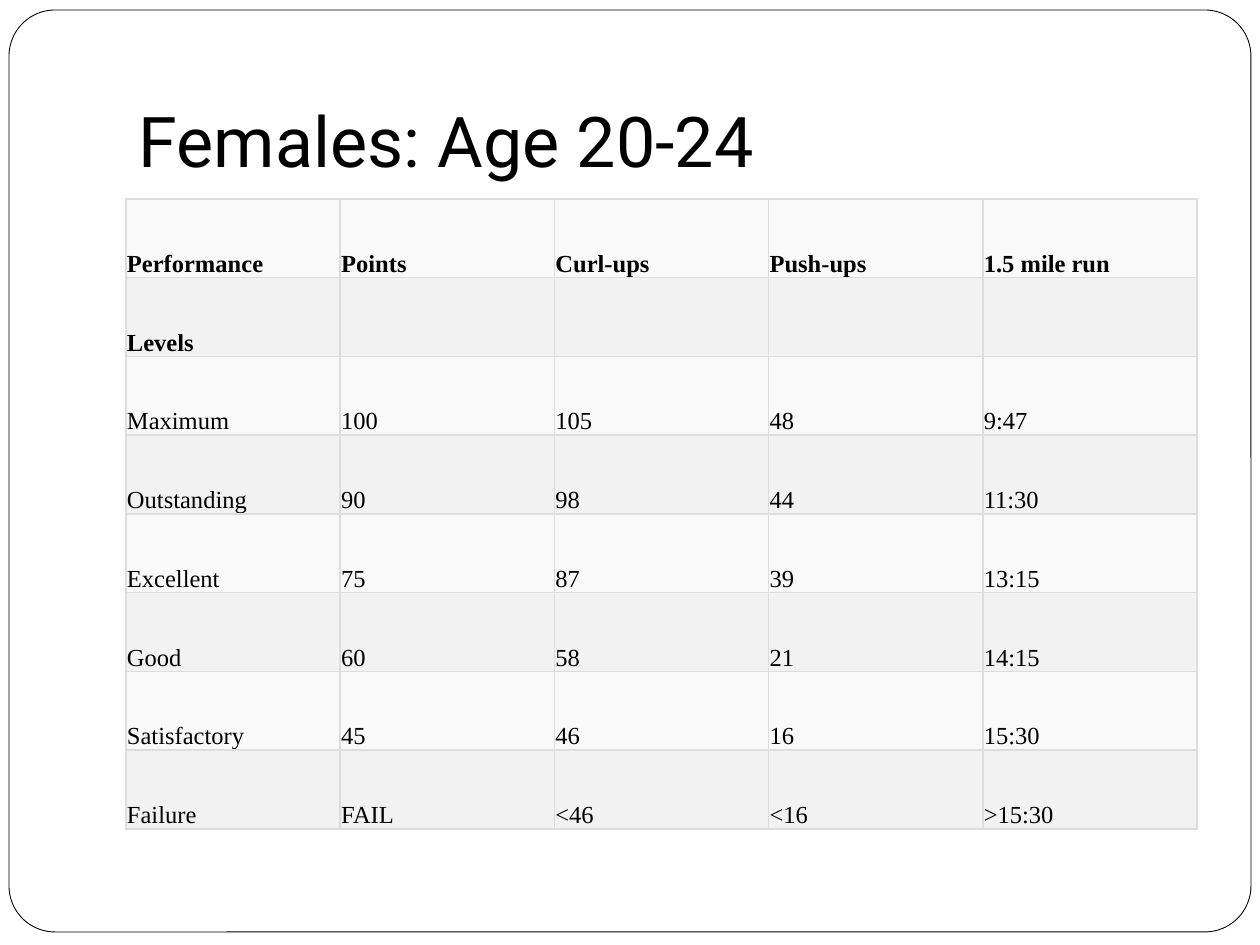
from lxml.etree import SubElement
from pptx import Presentation
from pptx.dml.color import RGBColor
from pptx.enum.shapes import MSO_SHAPE
from pptx.enum.text import MSO_ANCHOR, PP_ALIGN
from pptx.oxml.ns import qn
from pptx.util import Emu, Pt

PIXELS_PER_INCH = 126
BLACK = "000000"
WHITE = "FFFFFF"
BORDER = "DDDDDD"
ROW_FILLS = ("F9F9F9", "F2F2F2")
HEADER_ROWS = 2

FITNESS_LEVELS = [
    ("Performance", "Points", "Curl-ups", "Push-ups", "1.5 mile run"),
    ("Levels", "", "", "", ""),
    ("Maximum", "100", "105", "48", "9:47"),
    ("Outstanding", "90", "98", "44", "11:30"),
    ("Excellent", "75", "87", "39", "13:15"),
    ("Good", "60", "58", "21", "14:15"),
    ("Satisfactory", "45", "46", "16", "15:30"),
    ("Failure", "FAIL", "<46", "<16", ">15:30"),
]


def px(length):
    return Emu(round(length * 914400 / PIXELS_PER_INCH))


def color(hex_code):
    return RGBColor.from_string(hex_code)


def write_text(text_frame, text, *, font, size, bold=False, fill=BLACK):
    paragraph = text_frame.paragraphs[0]
    paragraph.alignment = PP_ALIGN.LEFT
    run = paragraph.add_run()
    run.text = text
    run.font.name = font
    run.font.size = Pt(size)
    run.font.bold = bold
    run.font.color.rgb = color(fill)


def set_margins(target, left, top, right, bottom):
    target.margin_left, target.margin_top = px(left), px(top)
    target.margin_right, target.margin_bottom = px(right), px(bottom)


def add_frame(slide):
    frame = slide.shapes.add_shape(
        MSO_SHAPE.ROUNDED_RECTANGLE, px(9), px(10), px(1242), px(922))
    frame.adjustments[0] = 0.05
    frame.shadow.inherit = False
    frame.fill.solid()
    frame.fill.fore_color.rgb = color(WHITE)
    frame.line.color.rgb = color(BLACK)
    frame.line.width = Pt(0.5)
    # Send the frame behind the title
    slide.shapes._spTree.insert(2, frame._element)


def format_title(slide, text):
    title = slide.shapes.title
    title.left, title.top = px(126), px(38)
    title.width, title.height = px(1071), px(157)
    text_frame = title.text_frame
    text_frame.word_wrap = True
    text_frame.vertical_anchor = MSO_ANCHOR.BOTTOM
    set_margins(text_frame, 13, 6, 13, 13)
    write_text(text_frame, text, font="Roboto", size=40)


def add_borders(cell):
    properties = cell._tc.get_or_add_tcPr()
    for side in ("a:lnL", "a:lnR", "a:lnT", "a:lnB"):
        line = SubElement(properties, qn(side), w=str(Pt(1)))
        fill = SubElement(line, qn("a:solidFill"))
        SubElement(fill, qn("a:srgbClr"), val=BORDER)


def format_cell(cell, text, row_index):
    set_margins(cell, 1, 1, 1, 0)
    cell.vertical_anchor = MSO_ANCHOR.BOTTOM
    add_borders(cell)
    cell.fill.solid()
    cell.fill.fore_color.rgb = color(ROW_FILLS[row_index % 2])
    if text:
        write_text(cell.text_frame, text, font="Times New Roman", size=14,
                   bold=row_index < HEADER_ROWS)


def add_levels_table(slide, rows):
    table = slide.shapes.add_table(
        len(rows), len(rows[0]), px(126), px(199), px(1071), px(630)).table
    for row_index, row in enumerate(rows):
        for column_index, text in enumerate(row):
            format_cell(table.cell(row_index, column_index), text, row_index)


def main():
    presentation = Presentation()
    presentation.slide_width, presentation.slide_height = px(1260), px(945)
    slide = presentation.slides.add_slide(presentation.slide_layouts[5])

    # Background and frame
    slide.background.fill.solid()
    slide.background.fill.fore_color.rgb = color(WHITE)
    add_frame(slide)

    # Title and table
    format_title(slide, "Females: Age 20-24")
    add_levels_table(slide, FITNESS_LEVELS)

    presentation.save("out.pptx")


if __name__ == "__main__":
    main()
